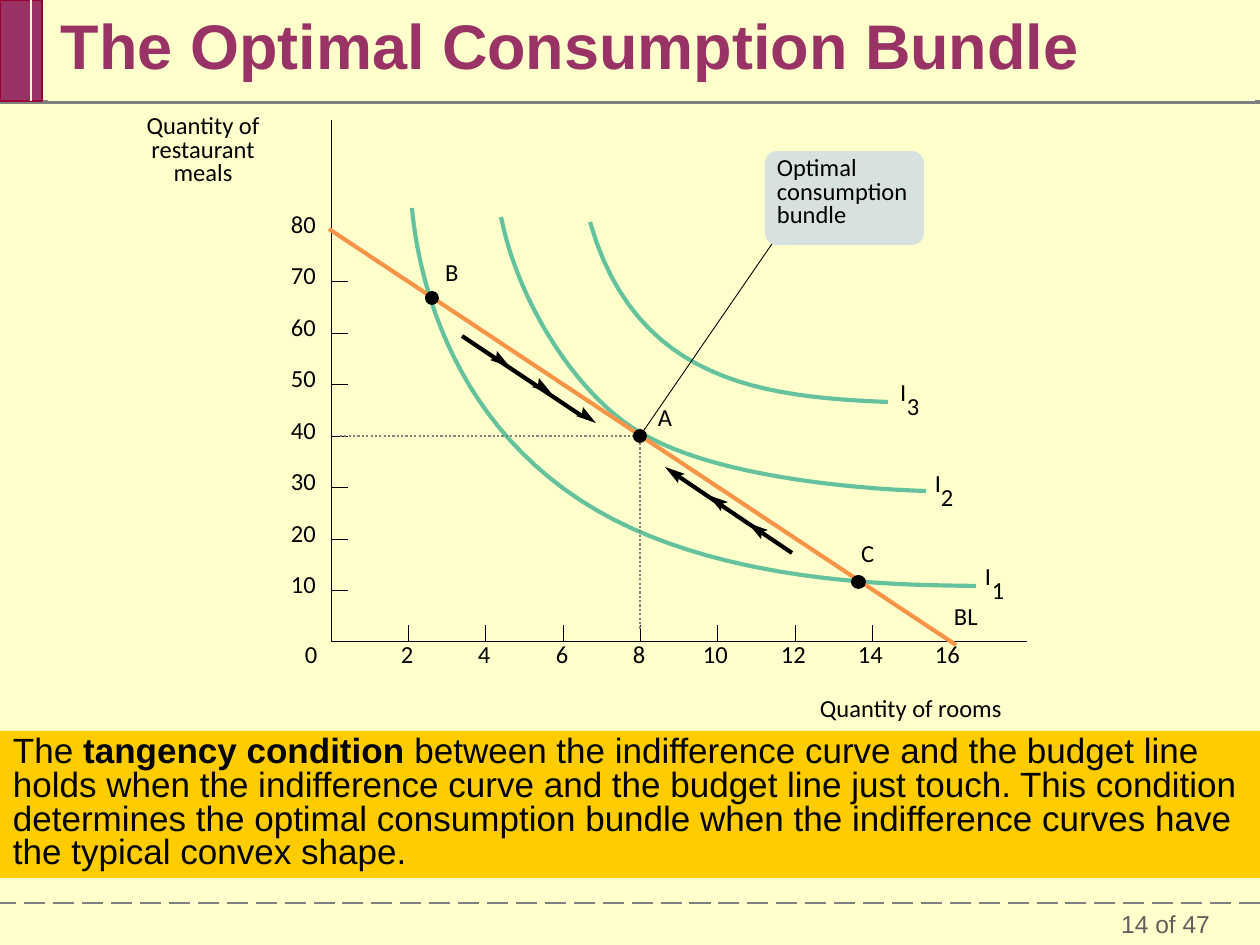
from lxml.etree import SubElement
from pptx import Presentation
from pptx.dml.color import RGBColor as RGB
from pptx.enum.dml import MSO_LINE as DASH
from pptx.enum.shapes import MSO_CONNECTOR as CONN, MSO_SHAPE as SHAPE
from pptx.enum.text import MSO_ANCHOR as ANCHOR, PP_ALIGN as ALIGN
from pptx.oxml.ns import qn
from pptx.util import Pt

PX = 914400 / 126
COLORS = {
    "cream": "FFFFCC", "plum": "993366", "plum_edge": "990033", "gray": "808080",
    "dark_gray": "5F5F5F", "black": "000000", "green": "64C29C", "orange": "F79448",
    "callout": "D7E2E0", "gold": "FFCC00",
}
C = {name: RGB.from_string(code) for name, code in COLORS.items()}

prs = Presentation()
prs.slide_width, prs.slide_height = round(1260 * PX), round(945 * PX)
s = prs.slides.add_slide(prs.slide_layouts[6])
s.background.fill.solid()
s.background.fill.fore_color.rgb = C["cream"]


def add_line(x1, y1, x2, y2, color="black", width=0.5, dash=None):
    ln = s.shapes.add_connector(CONN.STRAIGHT, *(round(v * PX) for v in (x1, y1, x2, y2)))
    ln.line.color.rgb = C[color]
    ln.line.width = Pt(width)
    if dash:
        ln.line.dash_style = dash
    SubElement(ln._element.spPr, qn("a:effectLst"))


def add_text(x, y, w, h, runs, size=14, font="Calibri", color="black", spacing=0.8,
             align=ALIGN.LEFT, anchor=ANCHOR.TOP, margins=(0, 0, 0, 0), wrap=False, fill=None):
    sp = s.shapes.add_textbox(*(round(v * PX) for v in (x, y, w, h)))
    if fill:
        sp.fill.solid()
        sp.fill.fore_color.rgb = C[fill]
    tf = sp.text_frame
    tf.word_wrap = wrap
    tf.vertical_anchor = anchor
    tf.margin_left, tf.margin_top, tf.margin_right, tf.margin_bottom = (
        round(m * PX) for m in margins)
    p = tf.paragraphs[0]
    p.alignment = align
    p.line_spacing = spacing
    for words, bold in runs:
        r = p.add_run()
        r.text = words
        r.font.name, r.font.size, r.font.bold = font, Pt(size), bold
        r.font.color.rgb = C[color]


# Slide frame: page number, rules, corner bar
add_text(1071, 903, 189, 42, [("14 of 47", False)], size=14, font="Arial", color="dark_gray",
         spacing=1.0, align=ALIGN.RIGHT, anchor=ANCHOR.MIDDLE, margins=(0, 0, 50, 0), wrap=True)
add_line(1260, 903, 0, 903, "gray", 1.5, DASH.LONG_DASH)
add_line(1260, 102, 0, 102, "gray", 2)
bar = s.shapes.add_shape(SHAPE.RECTANGLE, 0, 0, round(42 * PX), round(101 * PX))
bar.shadow.inherit = False
bar.fill.solid()
bar.fill.fore_color.rgb = C["plum"]
bar.line.color.rgb = C["plum_edge"]
bar.line.width = Pt(0.75)
add_line(31, 0, 31, 101, "cream", 0.75)

# Axis ticks and numbers
ORIGIN_X, ORIGIN_Y = 331, 641
add_text(305, 645, 14, 24, [("0", False)])
for i in range(1, 9):
    x = ORIGIN_X + i * 232 // 3
    y = ORIGIN_Y - i * 360 // 7
    label = str(2 * i)
    width = 14 * len(label)
    add_text(x - width // 2, 645, width, 24, [(label, False)])
    add_text(291, y - 15, 28, 24, [(str(10 * i), False)])
    if i < 8:
        add_line(x, 625, x, ORIGIN_Y)
        add_line(ORIGIN_X, y, 348, y)

# Indifference curves: chains of cubic Béziers, each segment sampled evenly
STEPS = 24
curves = [
    [(501, 217), (519, 307), (582, 403), (648, 437), (743, 488), (926, 491), (926, 491)],
    [(976, 586), (905, 585), (711, 586), (580, 500), (447, 413), (418, 272), (412, 208)],
    [(590, 222), (636, 383), (765, 397), (888, 402)],
]
outlines = []
for pts in curves:
    track = [pts[0]]
    for k in range(0, len(pts) - 1, 3):
        for t in (n / STEPS for n in range(1, STEPS + 1)):
            weights = ((1 - t) ** 3, 3 * t * (1 - t) ** 2, 3 * t * t * (1 - t), t ** 3)
            track.append(tuple(sum(w * pt[axis] for w, pt in zip(weights, pts[k:k + 4]))
                               for axis in (0, 1)))
    outlines.append((track, "green", 2.38))

# Axes, open outlines like the curves
outlines.append(([(1027, ORIGIN_Y), (ORIGIN_X, ORIGIN_Y), (ORIGIN_X, 120)], "black", 0.5))
for track, color, width in outlines:
    emu = [(x * PX, y * PX) for x, y in track]
    fb = s.shapes.build_freeform(*emu[0])
    fb.add_line_segments(emu[1:], close=False)
    sp = fb.convert_to_shape()
    sp.shadow.inherit = False
    sp.fill.background()
    sp.line.color.rgb = C[color]
    sp.line.width = Pt(width)

# Budget line, callout leader, callout box and the three points
add_line(329, 229, 956, 645, "orange", 2.38)
add_line(640, 436, 774, 241)
for kind, x, y, w, h, color in [
    (SHAPE.ROUNDED_RECTANGLE, 765, 151, 159, 94, "callout"),
    (SHAPE.OVAL, 633, 429, 14, 14, "black"),
    (SHAPE.OVAL, 425, 291, 14, 14, "black"),
    (SHAPE.OVAL, 851, 575, 15, 14, "black"),
]:
    sp = s.shapes.add_shape(kind, *(round(v * PX) for v in (x, y, w, h)))
    sp.shadow.inherit = False
    sp.fill.solid()
    sp.fill.fore_color.rgb = C[color]
    sp.line.fill.background()
    if kind == SHAPE.ROUNDED_RECTANGLE:
        sp.adjustments[0] = 0.13
add_text(777, 158, 160, 71, [("Optimal consumption bundle", False)], wrap=True)

# Movement arrows toward A: a shaft with three heads on each side
add_line(462, 336, 582, 416, width=2.38)
add_line(672, 472, 792, 553, width=2.38)
HEAD = [(0, 0), (-20, -7), (-14, -9), (-13, -16)]
for sign, tips in [(1, [(596, 423), (552, 394), (510, 367)]),
                   (-1, [(665, 467), (708, 495), (748, 523)])]:
    for x, y in tips:
        emu = [((x + sign * dx) * PX, (y + sign * dy) * PX) for dx, dy in HEAD]
        fb = s.shapes.build_freeform(*emu[0])
        fb.add_line_segments(emu[1:])
        sp = fb.convert_to_shape()
        sp.shadow.inherit = False
        sp.fill.solid()
        sp.fill.fore_color.rgb = C["black"]
        sp.line.fill.background()

# Guides from A to the axes
add_line(340, 436, 633, 436, "gray", 1.25, DASH.ROUND_DOT)
add_line(640, 443, 640, 629, "gray", 1.25, DASH.ROUND_DOT)

# Point, curve and axis names
for label, x, y, w in [
    ("A", 658, 408, 17), ("B", 445, 263, 17), ("C", 861, 544, 17), ("BL", 954, 607, 30),
    ("I", 985, 567, 7), ("1", 992, 581, 14), ("I", 935, 474, 7), ("2", 941, 488, 14),
    ("I", 900, 383, 7), ("3", 907, 397, 14), ("Quantity of rooms", 820, 699, 193),
]:
    add_text(x, y, w, 24, [(label, False)])
add_text(136, 116, 134, 71, [("Quantity of restaurant meals", False)],
         align=ALIGN.CENTER, wrap=True)

# Title and takeaway
add_text(48, 0, 1207, 101, [("The Optimal Consumption Bundle", True)], size=36, font="Arial",
         color="plum", spacing=0.85, anchor=ANCHOR.MIDDLE, margins=(13, 6, 13, 6),
         wrap=True, fill="cream")
add_text(0, 731, 1260, 147, [
    ("The ", False),
    ("tangency condition ", True),
    ("between the indifference curve and the budget line holds when the indifference curve "
     "and the budget line just touch. This condition determines the optimal consumption "
     "bundle when the indifference curves have the typical convex shape.", False),
], size=20, font="Arial", margins=(13, 6, 13, 6), wrap=True, fill="gold")

prs.save("out.pptx")
